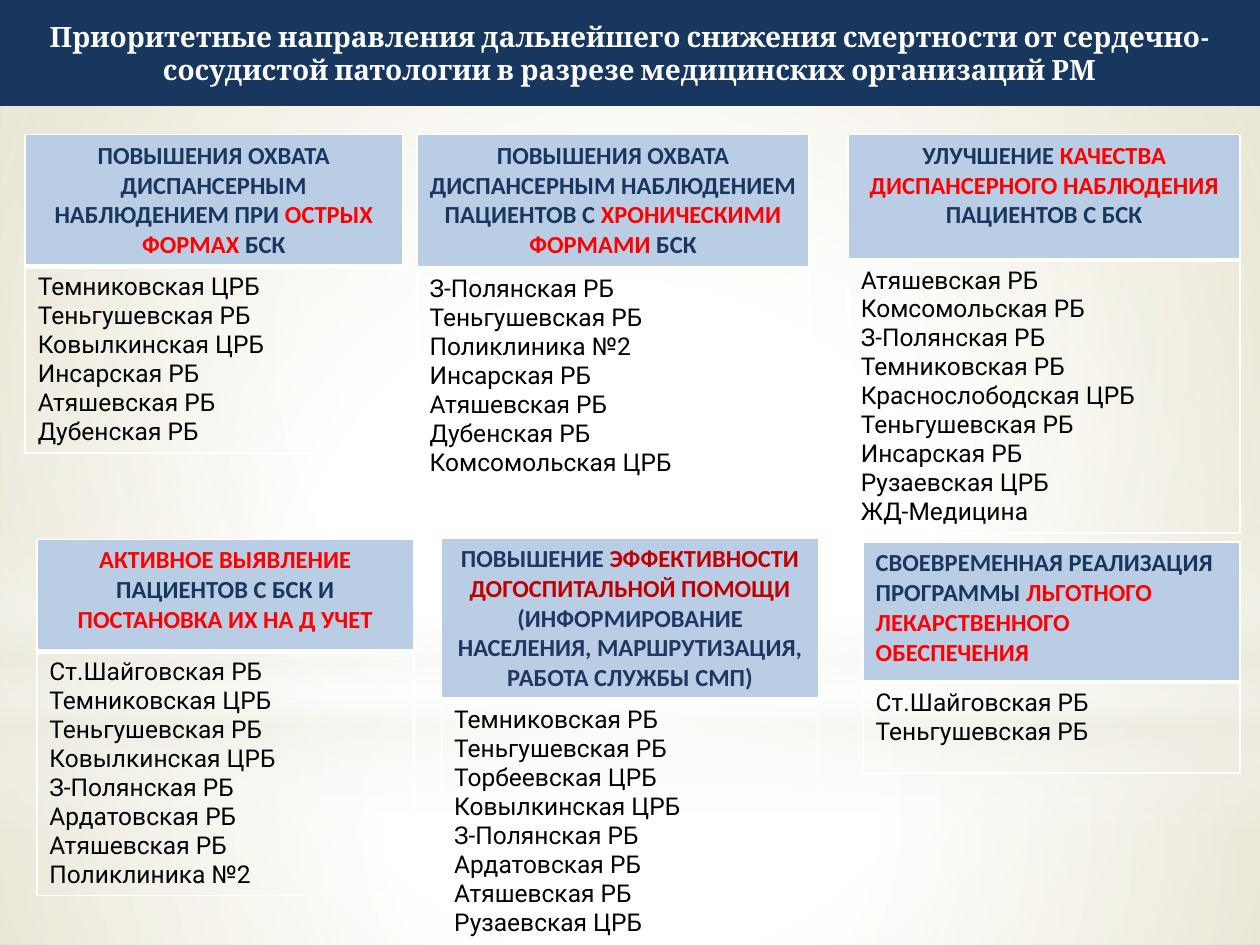
from dataclasses import dataclass

from lxml.etree import SubElement
from pptx import Presentation
from pptx.dml.color import RGBColor
from pptx.enum.shapes import MSO_SHAPE as Preset
from pptx.enum.text import MSO_ANCHOR as Anchor, PP_ALIGN as Align
from pptx.oxml import parse_xml
from pptx.oxml.ns import nsdecls, qn
from pptx.util import Pt

COLORS = {
    "white": "FFFFFF", "black": "000000", "navy": "17375E", "ink": "1F3863",
    "red": "FF0000", "crimson": "C00000", "header": "B9CDE5",
    "sand": "D7CFA5", "cream": "EEECE1",
}
SLIDE_W, SLIDE_H = 720, 540
TEXT_SIZE = 14
THIN, THICK = 1, 3
CENTER_FOCUS = (50, 50, 50, 50)

Stop = tuple[int, str, int]    # position %, colour name, opacity %
Piece = tuple[str, str]        # text, colour name


@dataclass
class Glow:
    preset: Preset
    top: float
    height: float
    stops: list[Stop]
    focus: tuple | None = CENTER_FOCUS


@dataclass
class Priority:
    left: float
    top: float
    width: float
    header_height: float
    body_height: float
    heading: list[list[Piece]]
    clinics: list[str]
    align: Align = Align.CENTER


BACKDROP = [(0, "white", 100), (42, "white", 100), (100, "sand", 100)]
GLOWS = [
    Glow(Preset.RECTANGLE, 402, 138,
         [(0, "white", 91), (37, "white", 76), (100, "cream", 79)]),
    Glow(Preset.RECTANGLE, 0, 402,
         [(0, "white", 89), (48, "white", 62), (100, "cream", 79)]),
    Glow(Preset.RECTANGLE, 297, 180,
         [(0, "white", 0), (29, "white", 30), (45, "cream", 40),
          (55, "white", 26), (65, "cream", 60), (100, "white", 0)], None),
    Glow(Preset.OVAL, 126, 402, [(0, "white", 100), (56, "white", 0)]),
]
TITLE = ("Приоритетные направления дальнейшего снижения смертности от "
         "сердечно-сосудистой патологии в разрезе медицинских организаций РМ")
PRIORITIES = [
    Priority(14.4, 77, 215.5, 67.5, 29.5,
             [[("ПОВЫШЕНИЯ ОХВАТА ДИСПАНСЕРНЫМ НАБЛЮДЕНИЕМ ПРИ ", "navy"),
               ("ОСТРЫХ ФОРМАХ ", "red"), ("БСК", "navy")]],
             ["Темниковская ЦРБ", "Теньгушевская РБ", "Ковылкинская ЦРБ",
              "Инсарская РБ", "Атяшевская РБ", "Дубенская РБ"]),
    Priority(238.3, 77, 224, 76.5, 128.5,
             [[("ПОВЫШЕНИЯ ОХВАТА ДИСПАНСЕРНЫМ НАБЛЮДЕНИЕМ ПАЦИЕНТОВ С ", "navy"),
               ("ХРОНИЧЕСКИМИ ФОРМАМИ ", "red"), ("БСК", "navy")]],
             ["З-Полянская РБ", "Теньгушевская РБ", "Поликлиника №2",
              "Инсарская РБ", "Атяшевская РБ", "Дубенская РБ",
              "Комсомольская ЦРБ"]),
    Priority(484.7, 77, 224, 71.5, 153.5,
             [[("УЛУЧШЕНИЕ ", "navy"),
               ("КАЧЕСТВА ДИСПАНСЕРНОГО НАБЛЮДЕНИЯ ", "red"),
               ("ПАЦИЕНТОВ С БСК", "navy")]],
             ["Атяшевская РБ", "Комсомольская РБ", "З-Полянская РБ",
              "Темниковская РБ", "Краснослободская ЦРБ", "Теньгушевская РБ",
              "Инсарская РБ", "Рузаевская ЦРБ", "ЖД-Медицина"]),
    Priority(21, 308.2, 215.5, 64, 29.5,
             [[("АКТИВНОЕ ВЫЯВЛЕНИЕ ", "red"), ("ПАЦИЕНТОВ С БСК И ", "navy"),
               ("ПОСТАНОВКА ИХ НА Д УЧЕТ", "red")]],
             ["Ст.Шайговская РБ", "Темниковская ЦРБ", "Теньгушевская РБ",
              "Ковылкинская ЦРБ", "З-Полянская РБ", "Ардатовская РБ",
              "Атяшевская РБ", "Поликлиника №2"]),
    Priority(252.3, 307.3, 215.5, 83, 29.5,
             [[("ПОВЫШЕНИЕ ", "ink"),
               ("ЭФФЕКТИВНОСТИ ДОГОСПИТАЛЬНОЙ ПОМОЩИ", "crimson")],
              [("(ИНФОРМИРОВАНИЕ НАСЕЛЕНИЯ, МАРШРУТИЗАЦИЯ, "
                "РАБОТА СЛУЖБЫ СМП)", "ink")]],
             ["Темниковская РБ", "Теньгушевская РБ", "Торбеевская ЦРБ",
              "Ковылкинская ЦРБ", "З-Полянская РБ", "Ардатовская РБ",
              "Атяшевская РБ", "Рузаевская ЦРБ"]),
    Priority(493.2, 309.7, 215.5, 80, 52,
             [[("СВОЕВРЕМЕННАЯ РЕАЛИЗАЦИЯ ПРОГРАММЫ ", "navy"),
               ("ЛЬГОТНОГО ЛЕКАРСТВЕННОГО ОБЕСПЕЧЕНИЯ", "red")]],
             ["Ст.Шайговская РБ", "Теньгушевская РБ"], Align.LEFT),
]


def rgb(name: str) -> RGBColor:
    return RGBColor.from_string(COLORS[name])


def fill_gradient(owner, fill, stops: list[Stop], focus: tuple | None) -> None:
    """Fill radially towards focus (left, top, right, bottom %), or downwards if None."""
    fill.solid()
    solid = next(owner.iter(qn("a:solidFill")))
    gradient = parse_xml(f'<a:gradFill {nsdecls("a")} rotWithShape="1"/>')
    stop_list = SubElement(gradient, qn("a:gsLst"))
    for position, color, opacity in stops:
        stop = SubElement(stop_list, qn("a:gs"), pos=str(position * 1000))
        shade = SubElement(stop, qn("a:srgbClr"), val=COLORS[color])
        SubElement(shade, qn("a:alpha"), val=str(opacity * 1000))
    if focus:
        radial = SubElement(gradient, qn("a:path"), {"path": "circle"})
        sides = {side: str(share * 1000) for side, share in zip("ltrb", focus)}
        SubElement(radial, qn("a:fillToRect"), sides)
    else:
        SubElement(gradient, qn("a:lin"), ang="5400000", scaled="0")
    solid.getparent().replace(solid, gradient)


def add_plain_shape(slide, preset: Preset, top: float, height: float):
    shape = slide.shapes.add_shape(preset, 0, Pt(top), Pt(SLIDE_W), Pt(height))
    shape.shadow.inherit = False
    shape.line.fill.background()
    return shape


def add_glow(slide, glow: Glow) -> None:
    shape = add_plain_shape(slide, glow.preset, glow.top, glow.height)
    fill_gradient(shape.element.spPr, shape.fill, glow.stops, glow.focus)


def write_paragraphs(frame, paragraphs: list[list[Piece]], font: str,
                     size: float, bold: bool, align: Align) -> None:
    for index, pieces in enumerate(paragraphs):
        paragraph = frame.add_paragraph() if index else frame.paragraphs[0]
        paragraph.alignment = align
        for text, color in pieces:
            run = paragraph.add_run()
            run.text = text
            run.font.name, run.font.size, run.font.bold = font, Pt(size), bold
            run.font.color.rgb = rgb(color)


def add_title(slide) -> None:
    banner = add_plain_shape(slide, Preset.RECTANGLE, 0, 60.5)
    banner.fill.solid()
    banner.fill.fore_color.rgb = rgb("navy")
    banner.text_frame.word_wrap = True
    banner.text_frame.vertical_anchor = Anchor.MIDDLE
    write_paragraphs(banner.text_frame, [[(TITLE, "white")]],
                     "Cambria", 16, True, Align.CENTER)


def set_borders(cell, top: float, bottom: float) -> None:
    properties = cell._tc.get_or_add_tcPr()
    widths = {"lnL": THIN, "lnR": THIN, "lnT": top, "lnB": bottom}
    for index, (side, width) in enumerate(widths.items()):
        properties.insert(index, parse_xml(
            f'<a:{side} {nsdecls("a")} w="{Pt(width)}"><a:solidFill>'
            f'<a:srgbClr val="{COLORS["white"]}"/></a:solidFill></a:{side}>'))


def add_priority(slide, priority: Priority) -> None:
    heights = priority.header_height, priority.body_height
    table = slide.shapes.add_table(
        2, 1, Pt(priority.left), Pt(priority.top),
        Pt(priority.width), Pt(sum(heights))).table
    table.horz_banding = False
    for row, height in zip(table.rows, heights):
        row.height = Pt(height)
    header, body = table.cell(0, 0), table.cell(1, 0)
    header.fill.solid()
    header.fill.fore_color.rgb = rgb("header")
    body.fill.background()
    set_borders(header, THIN, THICK)
    set_borders(body, THICK, THIN)
    write_paragraphs(header.text_frame, priority.heading,
                     "Calibri", TEXT_SIZE, True, priority.align)
    write_paragraphs(body.text_frame, [[(clinic, "black")] for clinic in priority.clinics],
                     "Roboto", TEXT_SIZE, False, Align.LEFT)


def main() -> None:
    deck = Presentation()
    deck.slide_width, deck.slide_height = Pt(SLIDE_W), Pt(SLIDE_H)
    slide = deck.slides.add_slide(deck.slide_layouts[6])
    fill_gradient(slide.element, slide.background.fill, BACKDROP, (24, 44, 24, 12))
    for glow in GLOWS:
        add_glow(slide, glow)
    add_title(slide)
    for priority in PRIORITIES:
        add_priority(slide, priority)
    deck.save("out.pptx")


if __name__ == "__main__":
    main()
